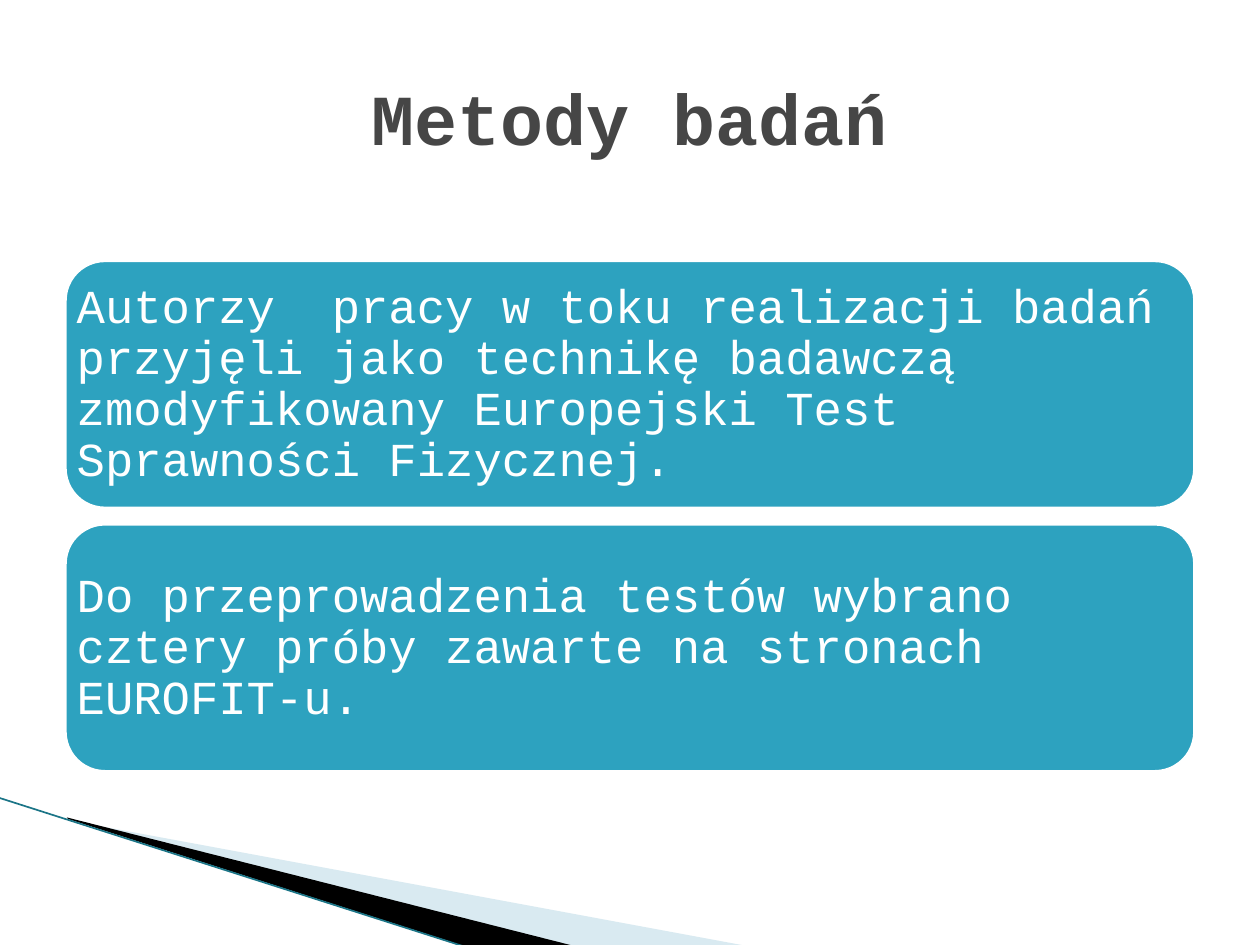
from lxml import etree
from pptx import Presentation
from pptx import util as u
from pptx.dml.color import RGBColor
from pptx.enum import shapes, text
from pptx.oxml import ns

METHODS = [
    "Autorzy  pracy w toku realizacji badań przyjęli jako technikę badawczą "
    "zmodyfikowany Europejski Test Sprawności Fizycznej.",
    "Do przeprowadzenia testów wybrano cztery próby zawarte na stronach EUROFIT-u.",
]
PALE_WEDGE = [(1.4, 16.54), (15.11, 19.08), (11.58, 19.08), (1.4, 16.51)]
DARK_WEDGE = [(1.35, 16.48), (11.61, 19.08), (9.45, 19.1), (1.37, 16.51)]


def paint(color_format, value):
    color_format.rgb = RGBColor.from_string(value)


def write(frame, words, size, color, bold=False, align=None, spacing=None, inset=None):
    frame.word_wrap = True
    frame.auto_size = text.MSO_AUTO_SIZE.NONE
    frame.vertical_anchor = text.MSO_ANCHOR.MIDDLE
    if inset is not None:
        frame.margin_left = frame.margin_right = u.Cm(inset)
        frame.margin_top = frame.margin_bottom = u.Cm(inset)
    paragraph = frame.paragraphs[0]
    paragraph.alignment = align
    paragraph.line_spacing = spacing
    run = paragraph.add_run()
    run.text = words
    run.font.name = "Courier New"
    run.font.size = u.Pt(size)
    run.font.bold = bold
    paint(run.font.color, color)


class Deck:
    accent = "2DA2BF"
    edge = "1B7587"
    heading = "464646"
    white = "FFFFFF"

    def __init__(self):
        self.show = Presentation()
        self.show.slide_width, self.show.slide_height = u.Cm(25.4), u.Cm(19.05)
        self.slide = self.show.slides.add_slide(self.show.slide_layouts[5])

    def title(self, words, left, top, width, height):
        heading = self.slide.shapes.title
        heading.left, heading.top = u.Cm(left), u.Cm(top)
        heading.width, heading.height = u.Cm(width), u.Cm(height)
        write(heading.text_frame, words, 41, self.heading, bold=True,
              align=text.PP_ALIGN.CENTER)

    def card(self, words, left, top, width, height):
        card = self.slide.shapes.add_shape(
            shapes.MSO_SHAPE.ROUNDED_RECTANGLE,
            u.Cm(left), u.Cm(top), u.Cm(width), u.Cm(height))
        card.shadow.inherit = False
        card.fill.solid()
        paint(card.fill.fore_color, self.accent)
        paint(card.line.color, self.white)
        card.line.width = u.Pt(4.33)
        write(card.text_frame, words, 27, self.white,
              align=text.PP_ALIGN.LEFT, spacing=0.9, inset=0.03)

    def wedge(self, corners, color, opacity=100):
        points = [(u.Cm(x), u.Cm(y)) for x, y in corners]
        builder = self.slide.shapes.build_freeform(*points[0])
        builder.add_line_segments(points[1:])
        wedge = builder.convert_to_shape()
        wedge.shadow.inherit = False
        wedge.line.fill.background()
        wedge.fill.solid()
        paint(wedge.fill.fore_color, color)
        if opacity < 100:
            tint = wedge.fill._xPr.find(".//" + ns.qn("a:srgbClr"))
            etree.SubElement(tint, ns.qn("a:alpha"), val=str(opacity * 1000))

    def rule(self, x1, y1, x2, y2):
        rule = self.slide.shapes.add_connector(
            shapes.MSO_CONNECTOR.STRAIGHT, u.Cm(x1), u.Cm(y1), u.Cm(x2), u.Cm(y2))
        paint(rule.line.color, self.edge)
        rule.line.width = u.Pt(0.95)
        etree.SubElement(rule._element.spPr, ns.qn("a:effectLst"))


def main():
    deck = Deck()
    deck.wedge(PALE_WEDGE, "A0CBDC", opacity=40)
    deck.wedge(DARK_WEDGE, "000000")
    deck.rule(-0.03, 16.08, 9.42, 19.1)
    for row, method in enumerate(METHODS):
        deck.card(method, 1.27, 5.21 + row * 5.31, 22.86, 5.08)
    deck.title("Metody badań", 1.27, 0.76, 22.86, 3.18)
    deck.show.save("out.pptx")


if __name__ == "__main__":
    main()
